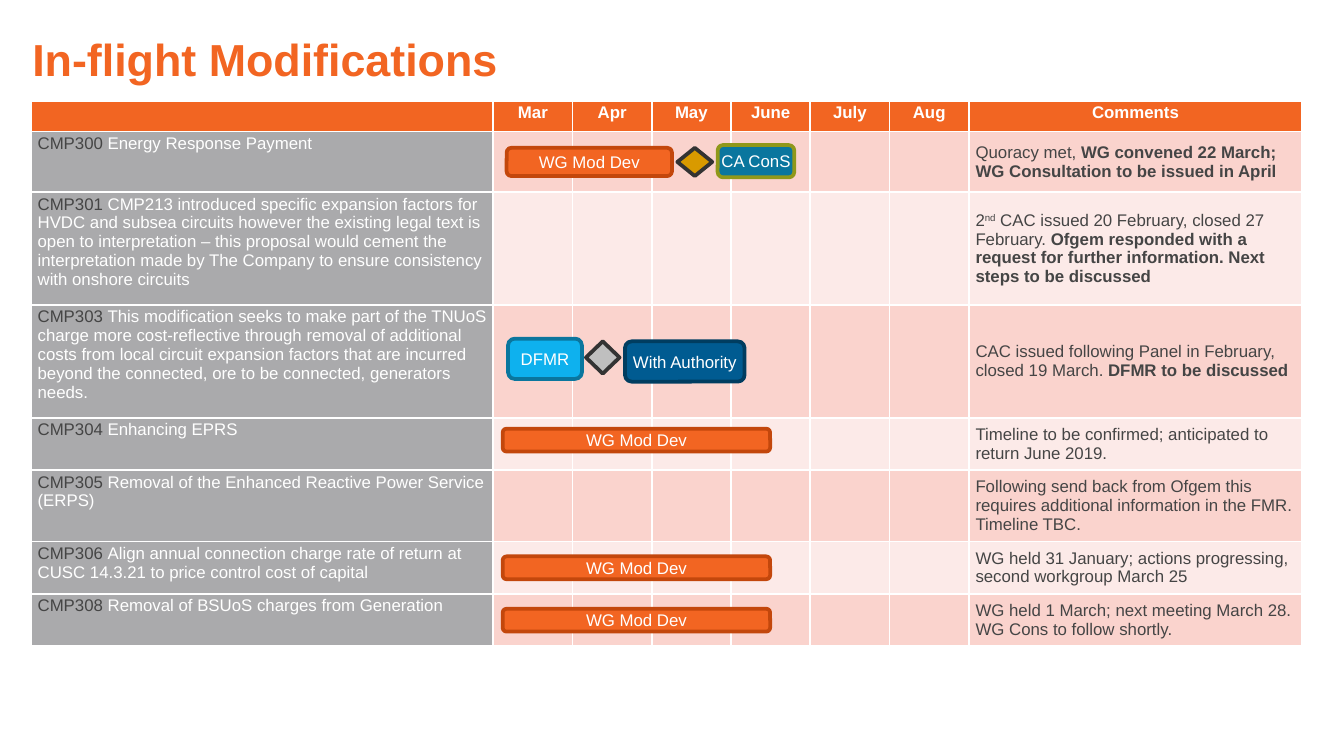
import pptx
import pptx.dml.color
import pptx.enum.shapes
import pptx.enum.text
import pptx.oxml.ns
import pptx.util
from lxml import etree

Inches = pptx.util.Inches
Pt = pptx.util.Pt
MSO = pptx.enum.shapes.MSO_SHAPE
ANCHOR = pptx.enum.text.MSO_ANCHOR
ALIGN = pptx.enum.text.PP_ALIGN
qn = pptx.oxml.ns.qn

COLORS = {
    "orange": "F26522", "rust": "C3470C", "white": "FFFFFF", "text": "454545",
    "grey": "AAAAAC", "pink": "FAD3CD", "pale": "FCEAE8", "teal": "0A769E",
    "olive": "90981A", "gold": "D99A00", "dark": "333333", "sky": "0EB1EE",
    "silver": "BFBFBF", "blue": "005B91", "navy": "003D60",
}
MONTHS = ["Mar", "Apr", "May", "June", "July", "Aug"]
COL_WIDTHS = [3.44] + [0.59] * len(MONTHS) + [2.48]
ROW_HEIGHTS = [0.23, 0.45, 0.84, 0.84, 0.39, 0.53, 0.39, 0.39]
MODS = [
    ("CMP300", "Energy Response Payment",
     [("Quoracy met, ", ""),
      ("WG convened 22 March; WG Consultation to be issued in April", "b")]),
    ("CMP301", "CMP213 introduced specific expansion factors for HVDC and subsea "
     "circuits however the existing legal text is open to interpretation – this "
     "proposal would cement the interpretation made by The Company to ensure "
     "consistency with onshore circuits",
     [("2", ""), ("nd", "sup"), (" CAC issued 20 February, closed 27 February. ", ""),
      ("Ofgem responded with a request for further information. "
       "Next steps to be discussed", "b")]),
    ("CMP303", "This modification seeks to make part of the TNUoS charge more "
     "cost-reflective through removal of additional costs from local circuit "
     "expansion factors that are incurred beyond the connected, ore to be "
     "connected, generators needs.",
     [("CAC issued following Panel in February, closed 19 March. ", ""),
      ("DFMR to be discussed", "b")]),
    ("CMP304", "Enhancing EPRS",
     [("Timeline to be confirmed; anticipated to return June 2019.", "")]),
    ("CMP305", "Removal of the Enhanced Reactive Power Service (ERPS)",
     [("Following send back from Ofgem this requires additional information "
       "in the FMR. Timeline TBC.", "")]),
    ("CMP306", "Align annual connection charge rate of return at CUSC 14.3.21 "
     "to price control cost of capital",
     [("WG held 31 January; actions progressing, second workgroup March 25", "")]),
    ("CMP308", "Removal of BSUoS charges from Generation",
     [("WG held 1 March; next meeting March 28. WG Cons to follow shortly.", "")]),
]
WG_BAR = (MSO.ROUNDED_RECTANGLE, "WG Mod Dev", "orange", "rust")
STAGES = [
    (*WG_BAR, 3.54, 0.35, 1.23, 0.21),
    (MSO.ROUNDED_RECTANGLE, "CA ConS", "teal", "olive", 5.11, 0.33, 0.57, 0.24),
    (MSO.DIAMOND, "", "gold", "dark", 4.81, 0.35, 0.26, 0.21),
    (MSO.ROUNDED_RECTANGLE, "DFMR", "sky", "teal", 3.55, 1.77, 0.55, 0.3),
    (MSO.DIAMOND, "", "silver", "dark", 4.13, 1.79, 0.25, 0.24),
    (MSO.ROUNDED_RECTANGLE, "With Authority", "blue", "navy", 4.42, 1.79, 0.89, 0.3),
    *[(*WG_BAR, 3.51, y, 1.99, 0.17) for y in (2.44, 3.39, 3.78)],
]


def rgb(name):
    """Return the named palette colour."""
    return pptx.dml.color.RGBColor.from_string(COLORS[name])


def add_run(p, text, color, size=9, style=""):
    """Add one formatted run to a paragraph."""
    r = p.add_run()
    r.text = text
    r.font.name = "Arial"
    r.font.size = Pt(size)
    r.font.bold = style == "b"
    r.font.color.rgb = rgb(color)
    if style == "sup":
        r._r.get_or_add_rPr().set("baseline", "30000")


def set_margins(box, x, y):
    """Set equal side margins and equal top and bottom margins."""
    box.margin_left = box.margin_right = Inches(x)
    box.margin_top = box.margin_bottom = Inches(y)


def style_cell(cell, fill):
    """Give a cell its margins, white borders and fill."""
    set_margins(cell, 0.05, 0.02)
    tcPr = cell._tc.get_or_add_tcPr()
    for side in "LRTB":
        ln = etree.SubElement(tcPr, qn("a:ln" + side), w=str(Pt(1)))
        solid = etree.SubElement(ln, qn("a:solidFill"))
        etree.SubElement(solid, qn("a:srgbClr"), val=COLORS["white"])
    cell.fill.solid()
    cell.fill.fore_color.rgb = rgb(fill)


def add_title(slide, left, top, width, height):
    """Place the slide title."""
    title = slide.shapes.title
    title.left, title.top = Inches(left), Inches(top)
    title.width, title.height = Inches(width), Inches(height)
    tf = title.text_frame
    set_margins(tf, 0, 0)
    tf.vertical_anchor = ANCHOR.TOP
    tf.auto_size = pptx.enum.text.MSO_AUTO_SIZE.NONE
    p = tf.paragraphs[0]
    p.alignment = ALIGN.LEFT
    p.line_spacing = 0.8
    add_run(p, "In-flight Modifications", "orange", 24, "b")


def add_mod_table(slide, left, top):
    """Place the table of modifications, months and comments."""
    table = slide.shapes.add_table(
        len(ROW_HEIGHTS), len(COL_WIDTHS), Inches(left), Inches(top),
        Inches(sum(COL_WIDTHS)), Inches(sum(ROW_HEIGHTS))).table
    table.first_row = table.horz_banding = False
    for col, width in zip(table.columns, COL_WIDTHS):
        col.width = Inches(width)
    for row, height in zip(table.rows, ROW_HEIGHTS):
        row.height = Inches(height)

    for cell, text in zip(table.rows[0].cells, ["", *MONTHS, "Comments"]):
        style_cell(cell, "orange")
        if text:
            p = cell.text_frame.paragraphs[0]
            p.alignment = ALIGN.CENTER
            add_run(p, text, "white", style="b")

    for i, (code, summary, comment) in enumerate(MODS, 1):
        cells = list(table.rows[i].cells)
        band = "pink" if i % 2 else "pale"
        for j, cell in enumerate(cells):
            style_cell(cell, band if j else "grey")
        p = cells[0].text_frame.paragraphs[0]
        add_run(p, code + " ", "text")
        add_run(p, summary, "white")
        cells[-1].vertical_anchor = ANCHOR.MIDDLE
        p = cells[-1].text_frame.paragraphs[0]
        for text, style in comment:
            add_run(p, text, "text", style=style)

    for cell in table.iter_cells():
        if not cell.text_frame.text:
            p = cell.text_frame.paragraphs[0]
            etree.SubElement(p._p, qn("a:endParaRPr"), sz="900")


def add_stages(slide, left, top):
    """Place the timeline bars and milestones over the table."""
    for kind, text, fill, line, x, y, width, height in STAGES:
        sp = slide.shapes.add_shape(kind, Inches(left + x), Inches(top + y),
                                    Inches(width), Inches(height))
        sp.shadow.inherit = False
        sp.fill.solid()
        sp.fill.fore_color.rgb = rgb(fill)
        sp.line.color.rgb = rgb(line)
        sp.line.width = Pt(2)
        if text:
            tf = sp.text_frame
            set_margins(tf, 0, 0)
            tf.vertical_anchor = ANCHOR.MIDDLE
            p = tf.paragraphs[0]
            p.alignment = ALIGN.CENTER
            add_run(p, text, "white")


def main():
    """Build the slide and save it."""
    prs = pptx.Presentation()
    prs.slide_width = Inches(10)
    prs.slide_height = prs.slide_width * 9 // 16
    slide = prs.slides.add_slide(prs.slide_layouts[5])
    add_title(slide, 0.24, 0.31, 6.64, 0.38)
    add_mod_table(slide, 0.23, 0.75)
    add_stages(slide, 0.23, 0.75)
    prs.save("out.pptx")


if __name__ == "__main__":
    main()
